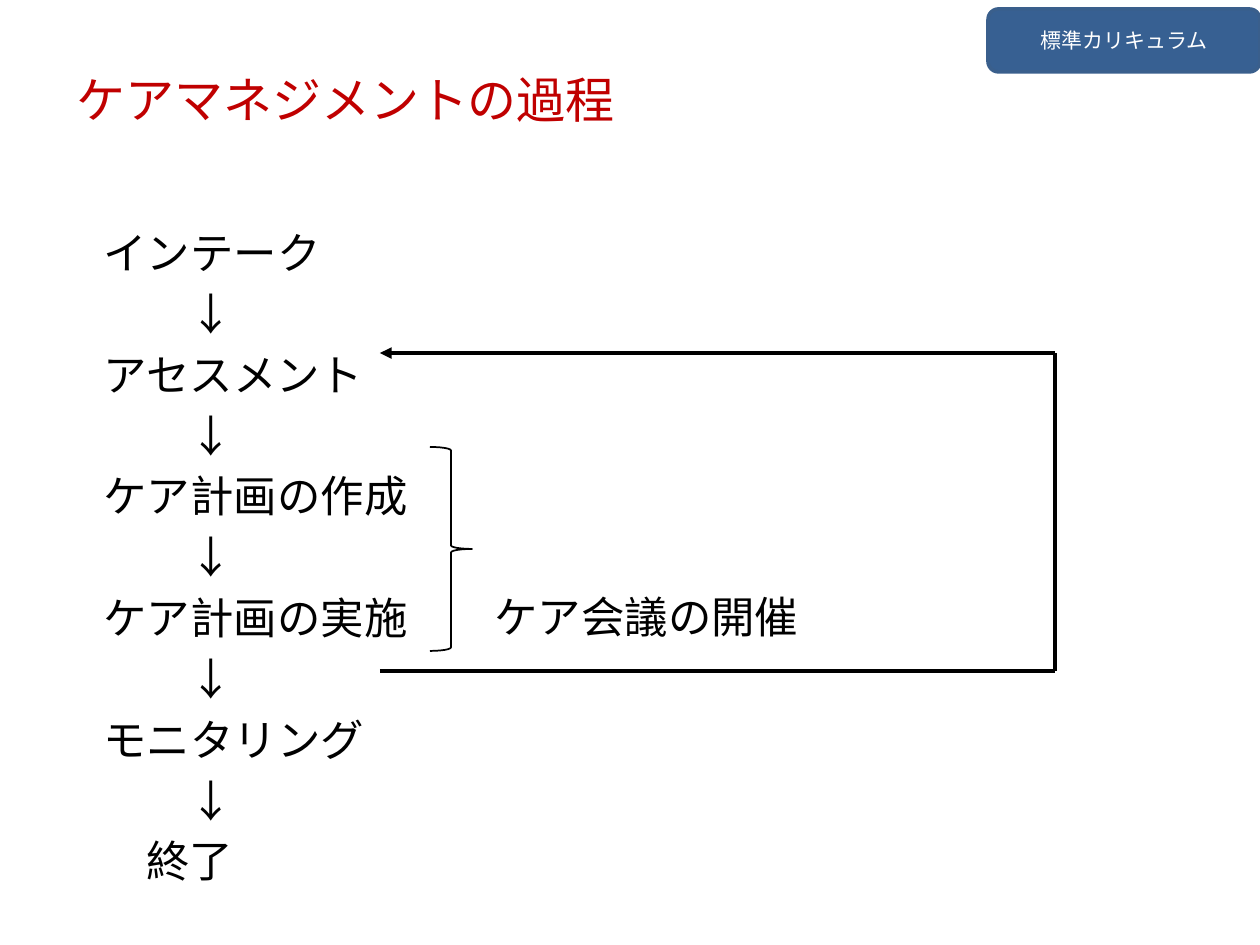
from lxml import etree
from pptx import Presentation
from pptx.dml.color import RGBColor
from pptx.enum.shapes import MSO_CONNECTOR, MSO_SHAPE
from pptx.enum.text import MSO_ANCHOR, MSO_AUTO_SIZE, PP_ALIGN
from pptx.oxml.ns import qn
from pptx.util import Pt

PX = 914400 / 126
RED = RGBColor(0xC0, 0x00, 0x00)
BLACK = RGBColor(0x00, 0x00, 0x00)
WHITE = RGBColor(0xFF, 0xFF, 0xFF)
BLUE = RGBColor(0x37, 0x60, 0x92)
EDGE = RGBColor(0x3A, 0x5F, 0x8C)
STRAIGHT = MSO_CONNECTOR.STRAIGHT
BRACE, ROUNDED = MSO_SHAPE.RIGHT_BRACE, MSO_SHAPE.ROUNDED_RECTANGLE
MIDDLE, NO_FIT = MSO_ANCHOR.MIDDLE, MSO_AUTO_SIZE.NONE
LEFT, CENTER = PP_ALIGN.LEFT, PP_ALIGN.CENTER
JP = "Noto Sans CJK JP"
EM = 43


def px(*values):
    return [round(v * PX) for v in values]


def add_run(p, text, size, color, font=JP):
    r = p.add_run()
    r.text = text
    r.font.size = Pt(size)
    r.font.color.rgb = color
    r.font.name = font
    etree.SubElement(r.font._element, qn("a:ea"), typeface=JP)


prs = Presentation()
prs.slide_width, prs.slide_height = px(1260, 945)
s = prs.slides.add_slide(prs.slide_layouts[1])
title, body = s.placeholders

title.left, title.top, title.width, title.height = px(64, 63, 1191, 72)
tf = title.text_frame
tf.auto_size = NO_FIT
tf.vertical_anchor = MIDDLE
p = tf.paragraphs[0]
p.alignment = LEFT
add_run(p, "ケアマネジメントの過程", 28, RED)

body.left, body.top, body.width, body.height = px(91, 220, 1134, 624)
tf = body.text_frame
tf.auto_size = NO_FIT
steps = [
    ("インテーク", 0),
    ("アセスメント", 0),
    ("ケア計画の作成", 0),
    ("ケア計画の実施", 0),
    ("モニタリング", 0),
    ("終了", 1),
]
lines = steps[:1]
for step in steps[1:]:
    lines += [("↓", 2), step]
for i, (text, indent) in enumerate(lines):
    p = tf.paragraphs[0] if i == 0 else tf.add_paragraph()
    p.line_spacing = 1.0
    p.space_before = Pt(5)
    pPr = p._p.get_or_add_pPr()
    pPr.set("marL", str(px(indent * EM)[0]))
    pPr.set("indent", "0")
    etree.SubElement(pPr, qn("a:buNone"))
    add_run(p, text, 24.8, BLACK)

meeting = s.shapes.add_textbox(*px(482, 584, 400, 66))
tf = meeting.text_frame
tf.word_wrap = True
add_run(tf.paragraphs[0], "ケア会議の開催", 24.8, BLACK)

loop = [(380, 671), (1055, 671), (1055, 353), (380, 353)]
for start, end in zip(loop, loop[1:]):
    line = s.shapes.add_connector(STRAIGHT, *px(*start, *end))
    line.line.color.rgb = BLACK
    line.line.width = Pt(2.25)
    etree.SubElement(line._element.spPr, qn("a:effectLst"))
etree.SubElement(line.line._get_or_add_ln(), qn("a:tailEnd"), type="triangle")

brace = s.shapes.add_shape(BRACE, *px(430, 447, 42, 204))
brace.shadow.inherit = False
brace.fill.background()
brace.line.color.rgb = BLACK
brace.line.width = Pt(1)

badge = s.shapes.add_shape(ROUNDED, *px(988, 9, 272, 63))
badge.shadow.inherit = False
badge.fill.solid()
badge.fill.fore_color.rgb = BLUE
badge.line.color.rgb = EDGE
badge.line.width = Pt(2)
tf = badge.text_frame
tf.vertical_anchor = MIDDLE
p = tf.paragraphs[0]
p.alignment = CENTER
add_run(p, "標準カリキュラム", 12, WHITE, "Calibri")

prs.save("out.pptx")
